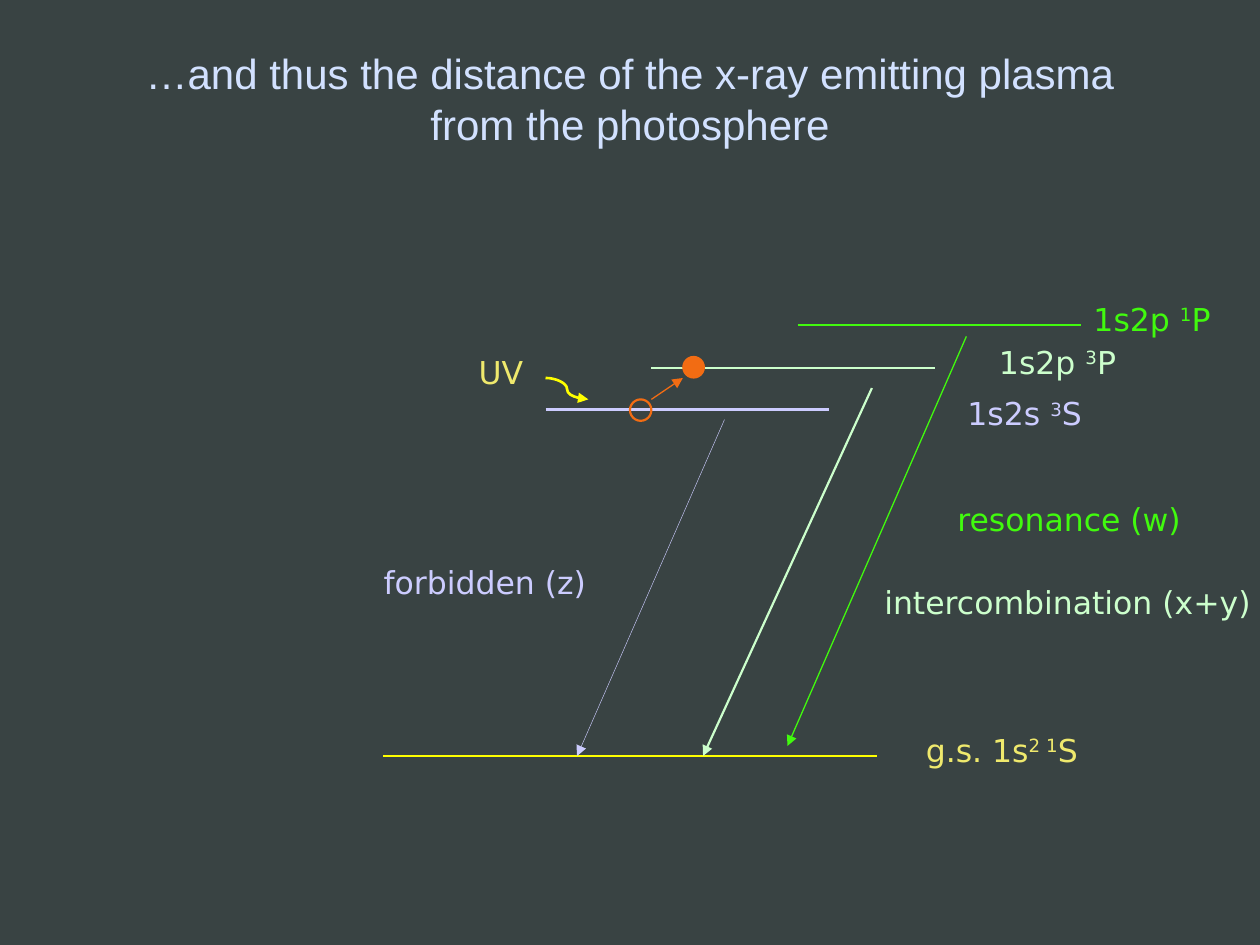
"""Build the slide of helium-like energy levels and their transitions."""
from collections import namedtuple

from lxml.etree import SubElement
from pptx import Presentation
from pptx.dml.color import RGBColor as Color
from pptx.enum.shapes import MSO_CONNECTOR as Link, MSO_SHAPE as Shape
from pptx.enum.text import MSO_ANCHOR as Anchor, MSO_AUTO_SIZE as Fit, PP_ALIGN as Align
from pptx.oxml.ns import qn
from pptx.util import Inches, Pt

Theme = namedtuple("Theme", "back title ground label forbid inter reson orange head body sans mono")
look = Theme(
    back="394343", title="D2E1FF", ground="FFFF00", label="EFE96D",
    forbid="CCCCFF", inter="CCFFCC", reson="41FA0E", orange="F26C13",
    head=24, body=18, sans="Arial", mono="DejaVu Sans",
)


def write(frame, text, color, size=look.body, font=look.mono, align=Align.LEFT, wrap=True):
    """Fill a text frame; parts between carets are raised."""
    frame.word_wrap = wrap
    frame.auto_size = Fit.SHAPE_TO_FIT_TEXT
    frame.vertical_anchor = Anchor.TOP
    para = frame.paragraphs[0]
    para.alignment = align
    for i, part in enumerate(text.split("^")):
        run = para.add_run()
        run.text = part
        run.font.size = Pt(size)
        run.font.name = font
        run.font.color.rgb = Color.from_string(color)
        if i % 2:
            run.font._element.set("baseline", "30000") if hasattr(run.font, "_element") else \
                run._r.get_or_add_rPr().set("baseline", "30000")


def draw(start, end, color, width, kind=Link.STRAIGHT, arrow=True):
    """Draw a line, with an arrowhead at its end if wanted."""
    line = shapes.add_connector(kind, *map(Inches, start + end))
    line.line.color.rgb = Color.from_string(color)
    line.line.width = Pt(width)
    if arrow:
        SubElement(line.line._get_or_add_ln(), qn("a:tailEnd"), type="triangle")
    SubElement(line._element.spPr, qn("a:effectLst"))


deck = Presentation()
deck.slide_width, deck.slide_height = Inches(10), Inches(7.5)
slide = deck.slides.add_slide(deck.slide_layouts[5])
shapes = slide.shapes
fill = slide.background.fill
fill.solid()
fill.fore_color.rgb = Color.from_string(look.back)

title = shapes.title
title.left, title.top, title.width, title.height = map(Inches, (1, 0.33, 8, 0.91))
write(title.text_frame, "…and thus the distance of the x-ray emitting plasma from the photosphere",
      look.title, size=look.head, font=look.sans, align=Align.CENTER)

levels = [
    (3.04, 6, 3.92, look.ground),
    (4.33, 3.25, 2.25, look.forbid),
    (5.17, 2.92, 2.25, look.inter),
    (6.33, 2.58, 2.25, look.reson),
]
for x, y, span, color in levels:
    draw((x, y), (x + span, y), color, 1.25, arrow=False)

decays = [
    ((7.67, 2.67), (6.25, 5.92), look.reson, 0.75),
    ((5.75, 3.33), (4.58, 6), look.forbid, 0.25),
    ((6.92, 3.08), (5.58, 6), look.inter, 1.25),
]
for start, end, color, width in decays:
    draw(start, end, color, width)

labels = [
    (7.58, 3.08, 1.14, "1s2s ^3^S", look.forbid, {"wrap": False}),
    (7.83, 2.67, 1.25, "1s2p ^3^P", look.inter, {}),
    (8.58, 2.33, 1.25, "1s2p ^1^P", look.reson, {}),
    (7.5, 3.92, 2.33, "resonance (w)", look.reson, {}),
    (6.92, 4.58, 3.42, "intercombination (x+y)", look.inter, {}),
    (1.83, 4.42, 2.92, "forbidden (z)", look.forbid, {"align": Align.RIGHT}),
    (7.25, 5.75, 2, "g.s. 1s^2 1^S", look.label, {}),
    (3.33, 2.75, 0.92, "UV", look.label, {"align": Align.RIGHT}),
]
for x, y, width, text, color, style in labels:
    box = shapes.add_textbox(*map(Inches, (x, y, width, 0.4)))
    write(box.text_frame, text, color, **style)

for x, y, width, solid in [(5, 3.17, 1.25, False), (5.42, 2.83, 0.75, True)]:
    dot = shapes.add_shape(Shape.OVAL, *map(Inches, (x, y, 0.17, 0.17)))
    dot.shadow.inherit = False
    dot.line.color.rgb = Color.from_string(look.orange)
    dot.line.width = Pt(width)
    if solid:
        dot.fill.solid()
        dot.fill.fore_color.rgb = Color.from_string(look.orange)
    else:
        dot.fill.background()

draw((4.33, 3), (4.67, 3.17), look.ground, 1.5, kind=Link.CURVE)
draw((5.17, 3.17), (5.42, 3), look.orange, 0.75)

deck.save("out.pptx")
